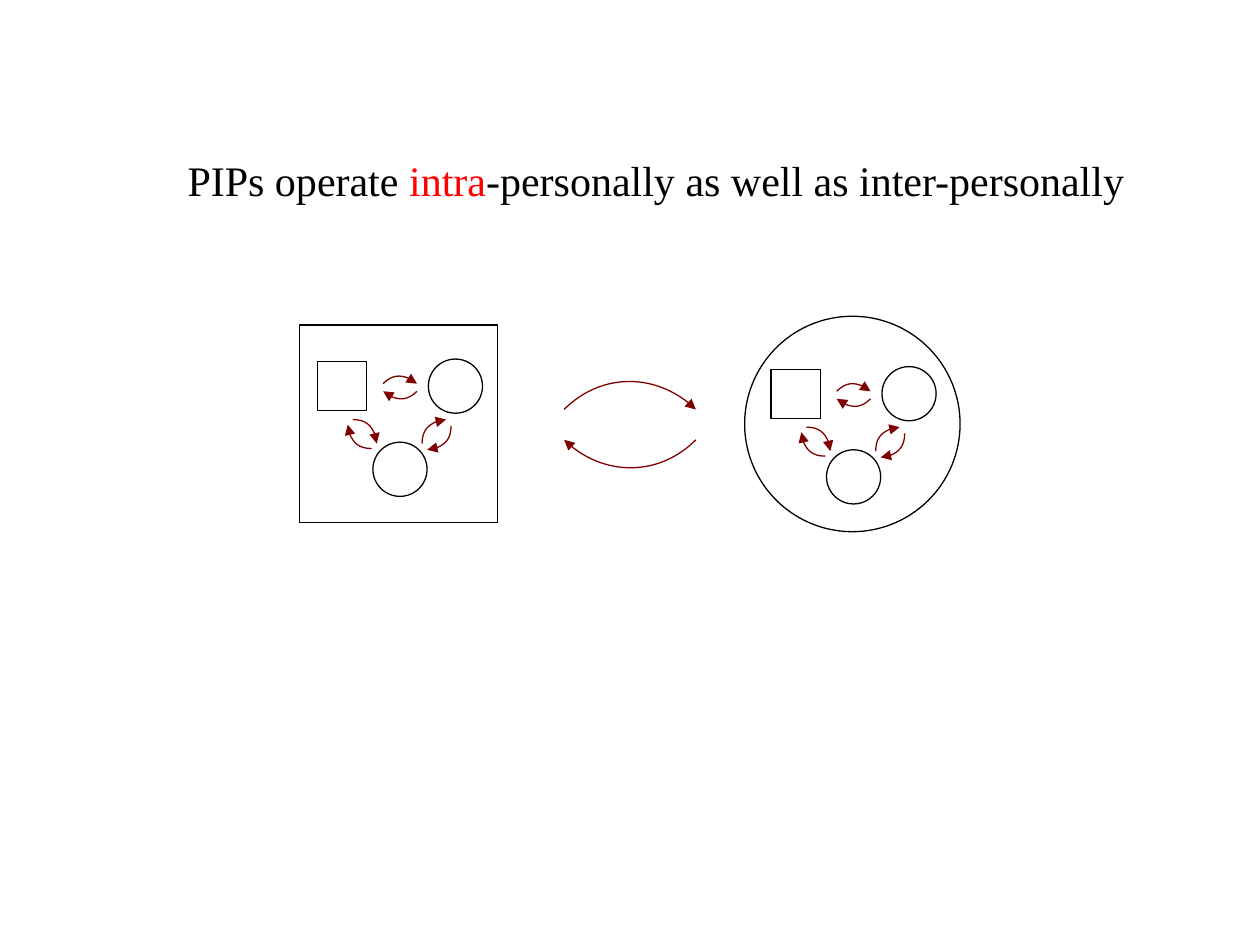
"""Build a slide showing interaction within and between two persons."""
from lxml import etree
from pptx import Presentation
from pptx.dml.color import RGBColor
from pptx.enum.shapes import MSO_SHAPE
from pptx.enum.text import MSO_AUTO_SIZE
from pptx.oxml.ns import qn
from pptx.util import Inches, Pt

SQUARE = MSO_SHAPE.RECTANGLE
CIRCLE = MSO_SHAPE.OVAL
GROW = MSO_AUTO_SIZE.SHAPE_TO_FIT_TEXT
BLACK = RGBColor(0x00, 0x00, 0x00)
RED = RGBColor(0xFF, 0x00, 0x00)
MAROON = RGBColor(0x80, 0x00, 0x00)
FONT = {"name": "Times New Roman", "size": Pt(24)}
CURVE = ((0.55, 0), (1, 0.45), (1, 1))
TITLE = (
    ("PIPs operate ", BLACK),
    ("intra", RED),
    ("-personally as well as inter-personally", BLACK),
)
PERSONS = ((SQUARE, 2.38, 2.58, 1.57), (CIRCLE, 5.91, 2.51, 1.71))
EXCHANGE = ((4.63, 2.88, 315), (4.63, 3.12, 135))
NETWORK_ORIGINS = ((2.52, 2.85), (6.12, 2.91))
NETWORK_NODES = (
    (SQUARE, 0, 0.02, 0.39),
    (CIRCLE, 0.88, 0, 0.43),
    (CIRCLE, 0.44, 0.66, 0.43),
)
NETWORK_ARROWS = (
    (0.28, 0.48, 0),
    (0.24, 0.52, 180),
    (0.87, 0.53, 90),
    (0.83, 0.48, 270),
    (0.56, 0.1, 315),
    (0.56, 0.16, 135),
)


def style_outline(shape, color):
    """Leave a shape unfilled with a thin outline and no shadow."""
    shape.shadow.inherit = False
    shape.fill.background()
    shape.line.color.rgb = color
    shape.line.width = Pt(0.75)


def add_node(shapes, kind, left, top, side):
    """Add an equal-sided node."""
    node = shapes.add_shape(kind, Inches(left), Inches(top), Inches(side), Inches(side))
    style_outline(node, BLACK)


def add_curved_arrow(shapes, left, top, side, rotation):
    """Add a quarter-circle arrow turned by the given angle."""
    x, y, length = Inches(left), Inches(top), Inches(side)
    builder = shapes.build_freeform(x, y)
    builder.add_line_segments([(x + length, y + length)], close=False)
    arrow = builder.convert_to_shape()
    style_outline(arrow, MAROON)
    arrow.rotation = rotation
    segment = next(arrow._element.iter(qn("a:lnTo")))
    curve = etree.Element(qn("a:cubicBezTo"))
    for across, down in CURVE:
        point = {"x": str(round(across * length)), "y": str(round(down * length))}
        etree.SubElement(curve, qn("a:pt"), point)
    segment.getparent().replace(segment, curve)
    line = arrow._element.spPr.find(qn("a:ln"))
    etree.SubElement(line, qn("a:tailEnd"), {"type": "triangle"})


def add_network(slide, left, top):
    """Add a group of three nodes linked by pairs of arrows."""
    shapes = slide.shapes.add_group_shape().shapes
    for kind, x, y, side in NETWORK_NODES:
        add_node(shapes, kind, left + x, top + y, side)
    for x, y, rotation in NETWORK_ARROWS:
        add_curved_arrow(shapes, left + x, top + y, 0.19, rotation)


def add_title(slide):
    """Add the statement above the diagram."""
    box = slide.shapes.add_textbox(Inches(1.39), Inches(1.18), Inches(7.7), Inches(0.51))
    frame = box.text_frame
    frame.word_wrap = False
    frame.auto_size = GROW
    paragraph = frame.paragraphs[0]
    for text, color in TITLE:
        run = paragraph.add_run()
        run.text = text
        for name, value in FONT.items():
            setattr(run.font, name, value)
        run.font.color.rgb = color


def main():
    """Build and save the presentation."""
    presentation = Presentation()
    presentation.slide_width = Inches(10)
    presentation.slide_height = Inches(7.5)
    slide = presentation.slides.add_slide(presentation.slide_layouts[6])
    for person in PERSONS:
        add_node(slide.shapes, *person)
    exchange = slide.shapes.add_group_shape()
    for left, top, rotation in EXCHANGE:
        add_curved_arrow(exchange.shapes, left, top, 0.74, rotation)
    for left, top in NETWORK_ORIGINS:
        add_network(slide, left, top)
    add_title(slide)
    presentation.save("out.pptx")


if __name__ == "__main__":
    main()
